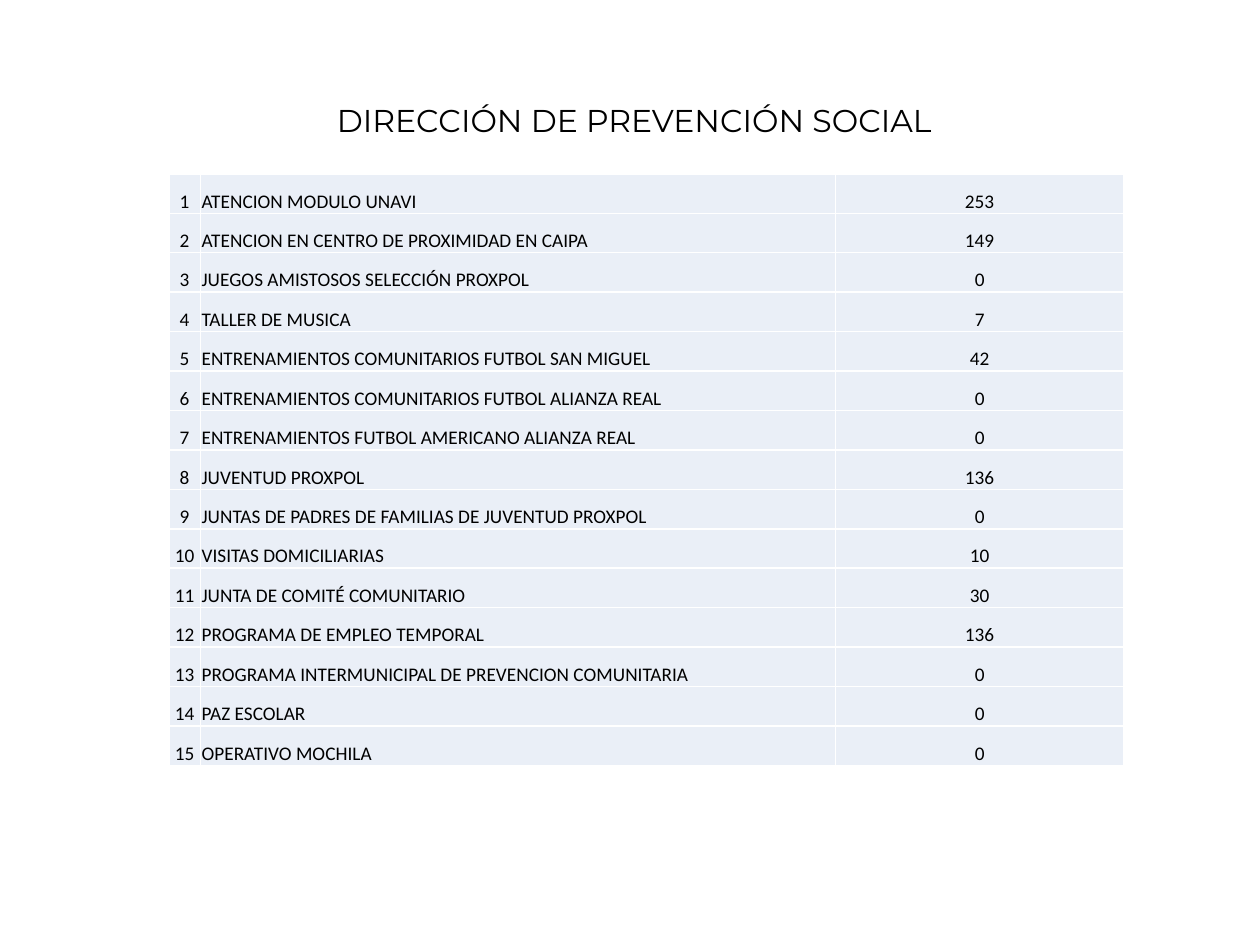
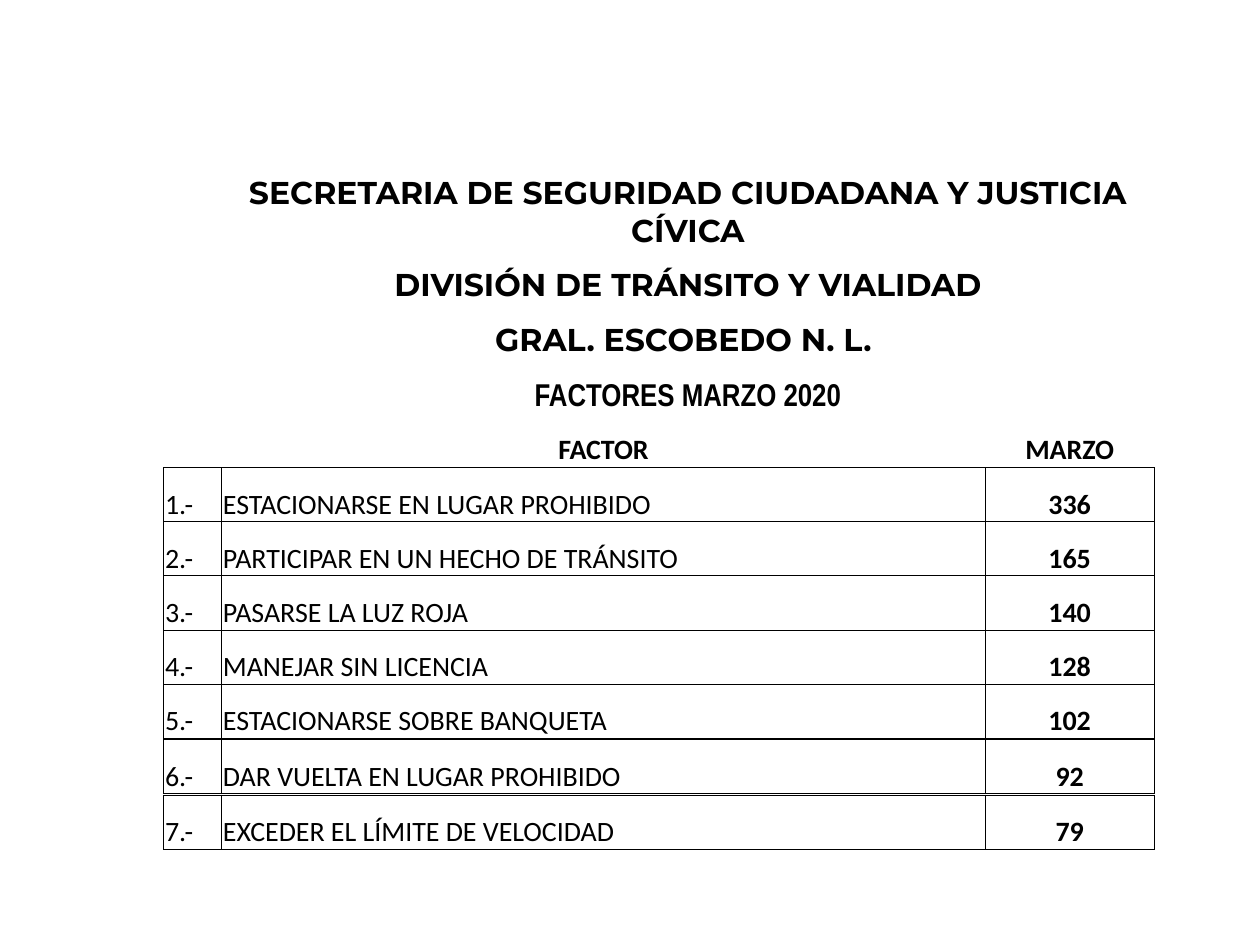
import pptx
import pptx.util
import pptx.dml.color
import pptx.enum.text
import pptx.oxml
import pptx.oxml.ns

Inches = pptx.util.Inches
Pt = pptx.util.Pt
RGBColor = pptx.dml.color.RGBColor
ALIGN = pptx.enum.text.PP_ALIGN
ANCHOR = pptx.enum.text.MSO_ANCHOR

BLACK = RGBColor(0x00, 0x00, 0x00)
WHITE = RGBColor(0xFF, 0xFF, 0xFF)
PALE_BLUE = RGBColor(0xEA, 0xEF, 0xF7)

TITLE = {"name": "Montserrat", "size": Pt(18), "bold": False}
HEADING = {"name": "Montserrat", "size": Pt(18), "bold": True}
PERIOD = {"name": "Arial Narrow", "size": Pt(18), "bold": True}
SMALL = {"name": "Calibri", "size": Pt(11), "bold": False}
BODY = {"name": "Calibri", "size": Pt(16), "bold": False}
BODY_BOLD = {"name": "Calibri", "size": Pt(16), "bold": True}

CELL = {
    "margin_left": Inches(0.01),
    "margin_right": Inches(0.01),
    "margin_top": Inches(0.01),
    "margin_bottom": 0,
    "vertical_anchor": ANCHOR.BOTTOM,
}

ACTIVITIES = [
    ("ATENCION MODULO UNAVI", 253),
    ("ATENCION EN CENTRO DE PROXIMIDAD EN CAIPA", 149),
    ("JUEGOS AMISTOSOS SELECCIÓN PROXPOL", 0),
    ("TALLER DE MUSICA", 7),
    ("ENTRENAMIENTOS COMUNITARIOS FUTBOL SAN MIGUEL", 42),
    ("ENTRENAMIENTOS COMUNITARIOS FUTBOL ALIANZA REAL", 0),
    ("ENTRENAMIENTOS FUTBOL AMERICANO ALIANZA REAL", 0),
    ("JUVENTUD PROXPOL", 136),
    ("JUNTAS DE PADRES DE FAMILIAS DE JUVENTUD PROXPOL", 0),
    ("VISITAS DOMICILIARIAS", 10),
    ("JUNTA DE COMITÉ COMUNITARIO", 30),
    ("PROGRAMA DE EMPLEO TEMPORAL", 136),
    ("PROGRAMA INTERMUNICIPAL DE PREVENCION COMUNITARIA", 0),
    ("PAZ ESCOLAR", 0),
    ("OPERATIVO MOCHILA", 0),
]

HEADINGS = [
    ("SECRETARIA DE SEGURIDAD CIUDADANA Y JUSTICIA CÍVICA", HEADING),
    ("DIVISIÓN DE TRÁNSITO Y VIALIDAD", HEADING),
    ("GRAL. ESCOBEDO N. L. ", HEADING),
    ("FACTORES MARZO 2020", PERIOD),
]

FACTORS = [
    ("ESTACIONARSE EN LUGAR PROHIBIDO", 336),
    ("PARTICIPAR EN UN HECHO DE TRÁNSITO", 165),
    ("PASARSE LA LUZ ROJA", 140),
    ("MANEJAR SIN LICENCIA", 128),
    ("ESTACIONARSE SOBRE BANQUETA", 102),
    ("DAR VUELTA EN LUGAR PROHIBIDO", 92),
    ("EXCEDER EL LÍMITE DE VELOCIDAD", 79),
]

FACTOR_COLS = [0.46, 6.06, 1.34]
FACTOR_ROW = 0.43


class Deck:
    def __init__(self):
        self.prs = pptx.Presentation()
        self.prs.slide_width = Inches(10)
        self.prs.slide_height = Inches(7.5)
        self.s = None

    def slide(self, layout):
        self.s = self.prs.slides.add_slide(self.prs.slide_layouts.get_by_name(layout))

    def text(self, tf, text, fmt, align):
        p = tf.paragraphs[0]
        p.alignment = align
        r = p.add_run()
        r.text = text
        for name, value in fmt.items():
            setattr(r.font, name, value)
        r.font.color.rgb = BLACK

    def title(self, text, left, top, width, height):
        sp = self.s.shapes.title
        box = {"left": left, "top": top, "width": width, "height": height}
        for name, value in box.items():
            setattr(sp, name, Inches(value))
        sp.text_frame.auto_size = pptx.enum.text.MSO_AUTO_SIZE.NONE
        self.text(sp.text_frame, text, TITLE, ALIGN.CENTER)

    def table(self, left, top, cols, rows):
        frame = self.s.shapes.add_table(
            len(rows), len(cols), Inches(left), Inches(top),
            Inches(sum(cols)), Inches(sum(rows)))
        tbl = frame.table
        tbl.first_row = tbl.horz_banding = False
        for col, width in zip(tbl.columns, cols):
            col.width = Inches(width)
        for row, height in zip(tbl.rows, rows):
            row.height = Inches(height)
        return tbl

    def cell(self, cell, text="", fmt=BODY, align=ALIGN.LEFT, fill=None,
             line=BLACK, width=0.5, sides="LRTB"):
        for name, value in CELL.items():
            setattr(cell, name, value)
        if fill is None:
            cell.fill.background()
        else:
            cell.fill.solid()
            cell.fill.fore_color.rgb = fill
        if text:
            self.text(cell.text_frame, text, fmt, align)
        for i, side in enumerate("LRTB"):
            paint = "<a:noFill/>"
            if side in sides:
                paint = f'<a:solidFill><a:srgbClr val="{line}"/></a:solidFill>'
            ln = pptx.oxml.parse_xml(
                f'<a:ln{side} {pptx.oxml.ns.nsdecls("a")} w="{Pt(width)}">{paint}</a:ln{side}>')
            cell._tc.get_or_add_tcPr().insert(i, ln)

    def row(self, tbl, row, values, fmts, aligns, **look):
        for col, (value, fmt, align) in enumerate(zip(values, fmts, aligns)):
            self.cell(tbl.cell(row, col), str(value), fmt, align, **look)

    def factors(self, tbl, first_row, first, last):
        for number in range(first, last + 1):
            name, count = FACTORS[number - 1]
            self.row(tbl, first_row + number - first, (f"{number}.-", name, count),
                     (BODY, BODY, BODY_BOLD), (ALIGN.LEFT, ALIGN.LEFT, ALIGN.CENTER))


def social_prevention(deck):
    deck.slide("Title Only")
    deck.title("DIRECCIÓN DE PREVENCIÓN SOCIAL", 1.61, 0.75, 6.85, 0.4)
    count = len(ACTIVITIES)
    tbl = deck.table(1.34, 1.38, [0.25, 5.04, 2.29], [4.7 / count] * count)
    for i, (name, total) in enumerate(ACTIVITIES):
        deck.row(tbl, i, (i + 1, name, total), [SMALL] * 3,
                 (ALIGN.CENTER, ALIGN.LEFT, ALIGN.CENTER),
                 fill=PALE_BLUE, line=WHITE, width=1)


def traffic_factors(deck):
    deck.slide("Blank")
    tbl = deck.table(1.3, 1.37, FACTOR_COLS, [0.59] + [FACTOR_ROW] * 9)
    for i, (text, fmt) in enumerate(HEADINGS):
        tbl.cell(i, 1).merge(tbl.cell(i, 2))
        deck.row(tbl, i, ("", text, ""), [fmt] * 3, [ALIGN.CENTER] * 3, sides="")
    deck.row(tbl, len(HEADINGS), ("", "FACTOR", "MARZO"), [BODY_BOLD] * 3,
             [ALIGN.CENTER] * 3, sides="B")
    deck.factors(tbl, len(HEADINGS) + 1, 1, 5)
    for number, top in ((6, 5.87), (7, 6.31)):
        tbl = deck.table(1.3, top, FACTOR_COLS, [FACTOR_ROW])
        deck.factors(tbl, 0, number, number)


def main():
    deck = Deck()
    social_prevention(deck)
    traffic_factors(deck)
    deck.prs.save("out.pptx")


if __name__ == "__main__":
    main()
